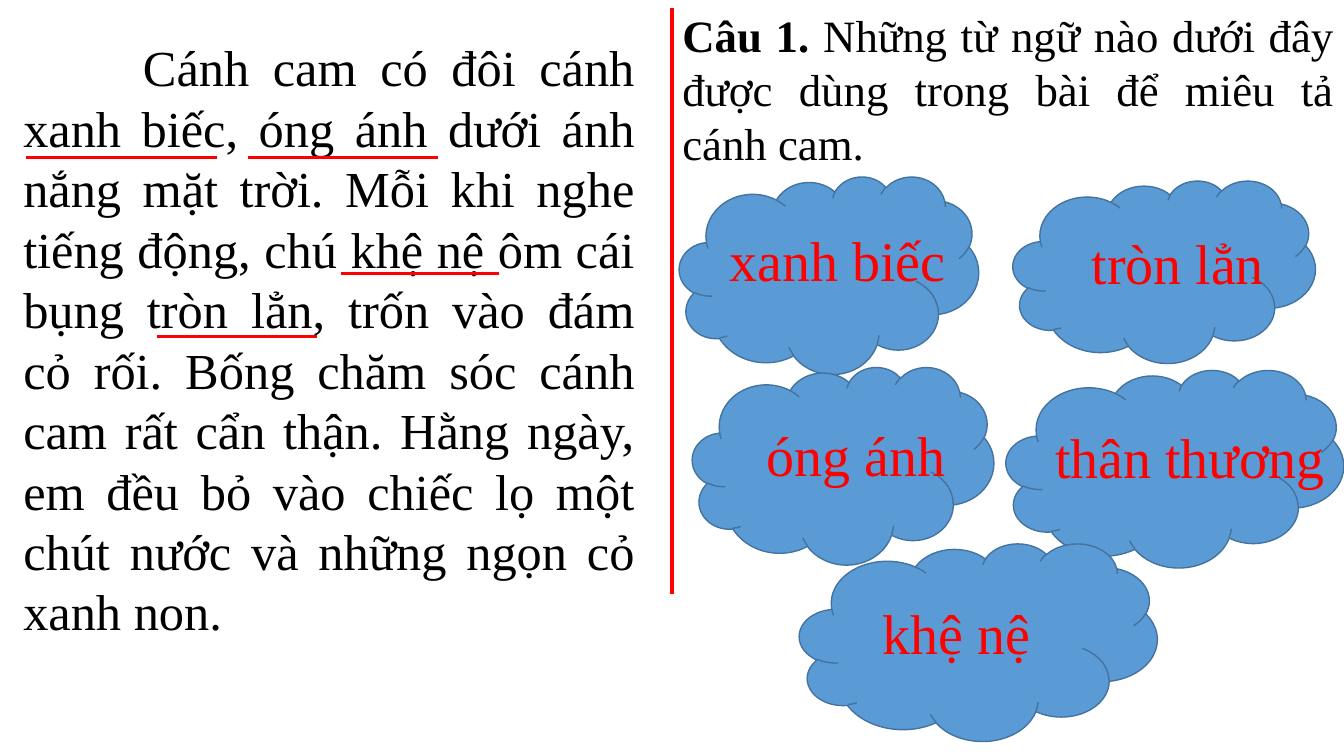
from dataclasses import dataclass

import lxml.etree
import pptx
import pptx.dml.color
import pptx.enum.shapes
import pptx.enum.text
import pptx.oxml.ns
import pptx.util

Pt = pptx.util.Pt
COLORS = {
    "ink": "000000",
    "red": "FF0000",
    "cloud": "5B9BD5",
    "cloud_edge": "43739E",
}
FONT = "Times New Roman"
QUESTION_LABEL = "Câu 1. "
QUESTION = "Những từ ngữ nào dưới đây được dùng trong bài để miêu tả cánh cam."
PASSAGE = (
    "Cánh cam có đôi cánh xanh biếc, óng ánh dưới ánh nắng mặt trời. "
    "Mỗi khi nghe tiếng động, chú khệ nệ ôm cái bụng tròn lẳn, trốn vào đám cỏ rối. "
    "Bống chăm sóc cánh cam rất cẩn thận. Hằng ngày, em đều bỏ vào chiếc lọ một "
    "chút nước và những ngọn cỏ xanh non."
)


@dataclass(frozen=True)
class Box:
    left: float
    top: float
    width: float
    height: float

    def lengths(self) -> tuple:
        return tuple(Pt(v) for v in (self.left, self.top, self.width, self.height))


@dataclass(frozen=True)
class Choice:
    word: str
    cloud: Box
    label: Box


@dataclass(frozen=True)
class Rule:
    start: tuple[float, float]
    end: tuple[float, float]
    weight: float = 2.25


CHOICES = [
    Choice("xanh biếc", Box(485.3, 126, 213.8, 141.1), Box(514.1, 157.7, 178.6, 55.4)),
    Choice("tròn lẳn", Box(723.6, 128.9, 216, 130.3), Box(772.6, 159.8, 158.4, 55.4)),
    Choice("óng ánh", Box(494.6, 262.1, 215.3, 141.1), Box(540.7, 296.6, 197.3, 55.4)),
    Choice("thân thương", Box(718.6, 264.2, 241.2, 141.1), Box(746.6, 298.1, 213, 55.4)),
    Choice("khệ nệ", Box(571, 388.1, 255.6, 141.1), Box(623.5, 424.1, 180, 55.4)),
]
DIVIDER = Rule((480.2, 5.8), (480.2, 424.1), 3)
UNDERLINES = [
    Rule((18.7, 112.3), (154.8, 112.3)),
    Rule((177.1, 112.3), (313.2, 112.3)),
    Rule((243.4, 195.1), (356.4, 195.1)),
    Rule((112.3, 240.5), (226.1, 240.5)),
]


def rgb(name: str) -> pptx.dml.color.RGBColor:
    return pptx.dml.color.RGBColor.from_string(COLORS[name])


def add_text(frame, text: str, *, size: float, color: str = "ink", bold: bool = False,
             justified: bool = False, indent: float = 0) -> None:
    """Append a run to the frame's first paragraph and format both."""
    frame.word_wrap = True
    frame.auto_size = pptx.enum.text.MSO_AUTO_SIZE.SHAPE_TO_FIT_TEXT
    frame.vertical_anchor = pptx.enum.text.MSO_ANCHOR.TOP
    paragraph = frame.paragraphs[0]
    alignments = pptx.enum.text.PP_ALIGN
    paragraph.alignment = alignments.JUSTIFY if justified else alignments.LEFT
    paragraph.space_before = Pt(0)
    properties = paragraph._p.get_or_add_pPr()
    properties.set("marL", "0")
    properties.set("indent", str(int(Pt(indent))))
    bullet_off = pptx.oxml.ns.qn("a:buNone")
    if properties.find(bullet_off) is None:
        lxml.etree.SubElement(properties, bullet_off)
    run = paragraph.add_run()
    run.text = text
    run.font.name = FONT
    run.font.size = Pt(size)
    run.font.bold = bold
    run.font.color.rgb = rgb(color)


def place(shape, box: Box) -> None:
    shape.left, shape.top, shape.width, shape.height = box.lengths()


def add_choice(slide, choice: Choice) -> None:
    cloud = slide.shapes.add_shape(
        pptx.enum.shapes.MSO_SHAPE.CLOUD, *choice.cloud.lengths())
    cloud.shadow.inherit = False
    cloud.fill.solid()
    cloud.fill.fore_color.rgb = rgb("cloud")
    cloud.line.color.rgb = rgb("cloud_edge")
    cloud.line.width = Pt(1)
    label = slide.shapes.add_textbox(*choice.label.lengths())
    add_text(label.text_frame, choice.word, size=40, color="red")


def add_rule(slide, rule: Rule) -> None:
    ends = [Pt(v) for v in (*rule.start, *rule.end)]
    line = slide.shapes.add_connector(
        pptx.enum.shapes.MSO_CONNECTOR.STRAIGHT, *ends)
    line.line.color.rgb = rgb("red")
    line.line.width = Pt(rule.weight)
    lxml.etree.SubElement(line._element.spPr, pptx.oxml.ns.qn("a:effectLst"))


def main() -> None:
    deck = pptx.Presentation()
    deck.slide_width, deck.slide_height = Pt(960), Pt(540)
    slide = deck.slides.add_slide(deck.slide_layouts[1])

    question = slide.shapes.title
    place(question, Box(480.2, 2.2, 480, 123.8))
    add_text(question.text_frame, QUESTION_LABEL, size=32, bold=True, justified=True)
    add_text(question.text_frame, QUESTION, size=32, justified=True)

    passage = slide.placeholders[1]
    place(passage, Box(9.4, 22.3, 451.4, 443.5))
    add_text(passage.text_frame, PASSAGE, size=36, justified=True, indent=85.5)

    for choice in CHOICES:
        add_choice(slide, choice)
    for rule in [DIVIDER, *UNDERLINES]:
        add_rule(slide, rule)
    deck.save("out.pptx")


if __name__ == "__main__":
    main()
